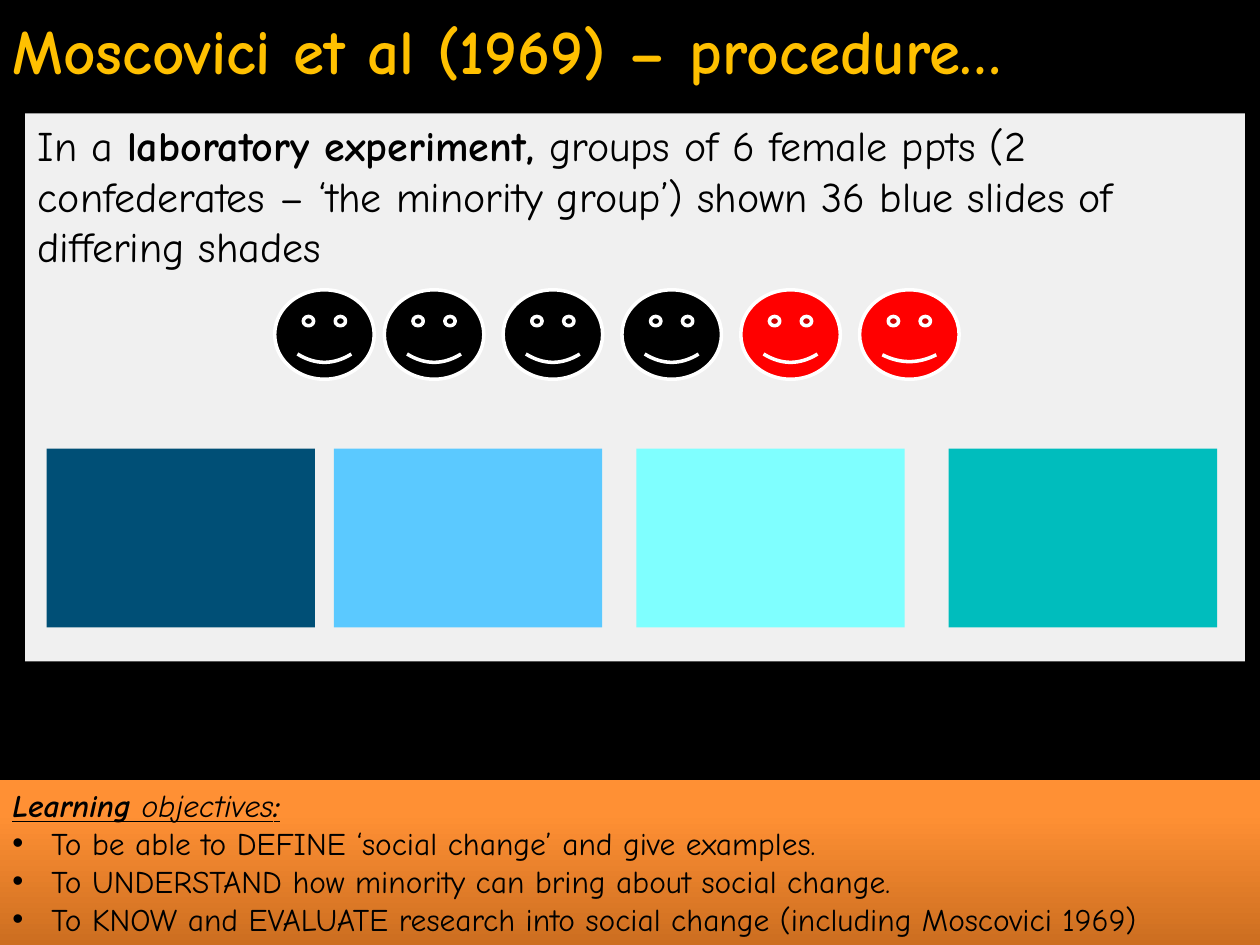
import pptx
import pptx.util
import pptx.dml.color
import pptx.enum.shapes
import pptx.enum.text
import pptx.oxml.ns
import lxml.etree

RGB = pptx.dml.color.RGBColor
BLACK = RGB(0, 0, 0)
WHITE = RGB(255, 255, 255)
RED = RGB(255, 0, 0)
GOLD = RGB(0xFF, 0xC0, 0x00)
RUST = RGB(0xCC, 0x6E, 0x20)
AMBER = RGB(0xFF, 0x90, 0x34)
NAVY = RGB(0x00, 0x4F, 0x76)
SKY = RGB(0x5B, 0xC9, 0xFF)
AQUA = RGB(0x7F, 0xFF, 0xFF)
TEAL = RGB(0x00, 0xBD, 0xBD)

FORM = pptx.enum.shapes.MSO_SHAPE
COLS, ROWS = 100, 75


def child(node, tag, **attrs):
    return lxml.etree.SubElement(node, pptx.oxml.ns.qn(tag), attrs)


class Deck:
    """Style and current slide; lengths are in columns and rows."""
    font = "Comic Neue"

    def __init__(self):
        self.show = pptx.Presentation()
        self.show.slide_width = pptx.util.Inches(10)
        self.show.slide_height = pptx.util.Inches(7.5)
        self.slide = self.show.slides.add_slide(self.show.slide_layouts[6])
        back = self.slide.background.fill
        back.solid()
        back.fore_color.rgb = BLACK

    def place(self, col, row, wide, high):
        dx, dy = self.show.slide_width / COLS, self.show.slide_height / ROWS
        return [round(n) for n in (col * dx, row * dy, wide * dx, high * dy)]

    def shape(self, form, box, color, home=None):
        home = home or self.slide
        shape = home.shapes.add_shape(form, *self.place(*box))
        shape.shadow.inherit = False
        shape.fill.solid()
        shape.fill.fore_color.rgb = color
        shape.line.fill.background()
        return shape

    def panel(self, box, color, alpha):
        """Add a see-through rectangle; alpha is in percent."""
        panel = self.shape(FORM.RECTANGLE, box, color)
        tint = panel._element.spPr.find(".//" + pptx.oxml.ns.qn("a:srgbClr"))
        child(tint, "a:alpha", val=str(alpha * 1000))
        return panel

    def band(self, box, low, high):
        """Add a rectangle shaded from low at its foot to high."""
        band = self.shape(FORM.RECTANGLE, box, low)
        band.fill.gradient()
        band.fill.gradient_angle = 90
        for stop, color, share in zip(band.fill.gradient_stops, (low, high), (0, 0.8)):
            stop.color.rgb = color
            stop.position = share
        return band

    def face(self, group, box, color):
        face = self.shape(FORM.SMILEY_FACE, box, color, group)
        face.line.color.rgb = WHITE
        face.line.width = pptx.util.Pt(2)
        return face

    def label(self, box):
        return self.slide.shapes.add_textbox(*self.place(*box))

    def words(self, shape, lines, size, color=BLACK):
        """Fill a shape with lines of (text, marks) runs; marks hold b, i, u."""
        frame = shape.text_frame
        frame.word_wrap = True
        frame.vertical_anchor = pptx.enum.text.MSO_ANCHOR.TOP
        for num, runs in enumerate(lines):
            para = frame.add_paragraph() if num else frame.paragraphs[0]
            para.alignment = pptx.enum.text.PP_ALIGN.LEFT
            for text, marks in runs:
                run = para.add_run()
                run.text = text
                font = run.font
                font.name, font.size = self.font, pptx.util.Pt(size)
                font.color.rgb = color
                font.bold = "b" in marks
                font.italic = "i" in marks
                font.underline = "u" in marks
        return frame

    def bullet(self, para):
        props = para._p.get_or_add_pPr()
        dent = pptx.util.Inches(0.31)
        props.set("marL", str(dent))
        props.set("indent", str(-dent))
        child(props, "a:buFont", typeface="Arial")
        child(props, "a:buChar", char="•")


def main():
    deck = Deck()

    goals = [
        "To be able to DEFINE ‘social change’ and give examples.",
        "To UNDERSTAND how minority can bring about social change.",
        "To KNOW and EVALUATE research into social change (including Moscovici 1969)",
    ]
    band = deck.band((0, 61.9, COLS, 13.1), RUST, AMBER)
    head = [("Learning ", "biu"), ("objectives", "iu"), (":", "biu")]
    frame = deck.words(band, [head] + [[(goal, "")] for goal in goals], 18)
    for para in frame.paragraphs[1:]:
        deck.bullet(para)

    title = deck.label((0, 0.4, 98.7, 7.1))
    deck.words(title, [[("Moscovici et al (1969) – procedure…", "b")]], 36, GOLD)

    panel = deck.panel((2, 9, 96.8, 43.5), WHITE, 94)
    frame = deck.words(panel, [[
        ("In a ", ""),
        ("laboratory experiment, ", "b"),
        ("groups of 6 female ppts (2 confederates – ‘the minority group’) "
         "shown 36 blue slides of differing shades", ""),
    ]], 24)
    frame.paragraphs[0].space_before = pptx.util.Pt(4.8)

    group = deck.slide.shapes.add_group_shape()
    spots = [21.8] + [30.5 + 9.43 * num for num in range(5)]
    for spot, color in zip(spots, [BLACK] * 4 + [RED] * 2):
        face = deck.face(group, (spot, 23, 7.9, 7.1), color)
    face.adjustments[0] = 0.038

    for col, color in zip((3.7, 26.5, 50.5, 75.3), (NAVY, SKY, AQUA, TEAL)):
        deck.shape(FORM.RECTANGLE, (col, 35.6, 21.3, 14.2), color)

    deck.show.save("out.pptx")


if __name__ == "__main__":
    main()
